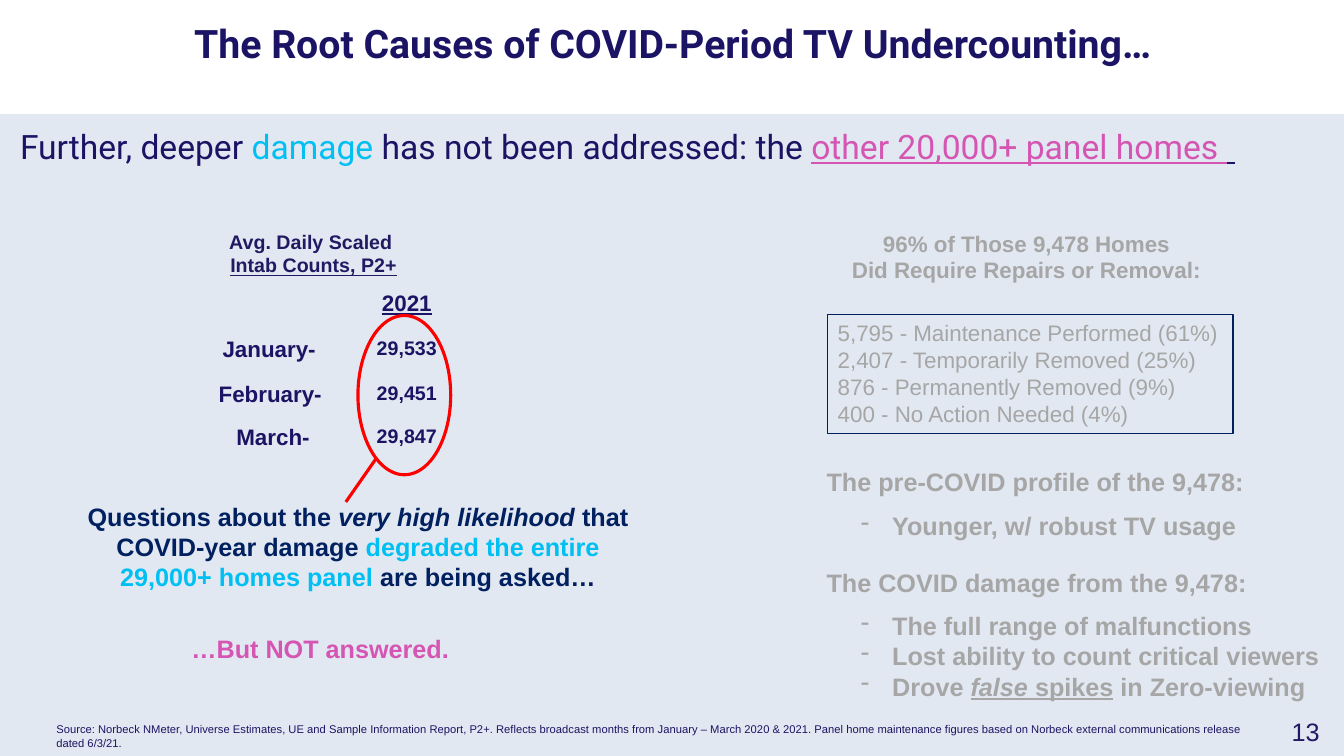
from dataclasses import dataclass

from lxml.etree import SubElement
from pptx import Presentation
from pptx.dml.color import RGBColor
from pptx.enum.shapes import MSO_CONNECTOR, MSO_SHAPE
from pptx.enum.text import MSO_ANCHOR, MSO_AUTO_SIZE, PP_ALIGN
from pptx.oxml.ns import qn
from pptx.util import Emu, Pt

SCALE = 9144  # EMU per px, 100 px to the inch
NAVY, INK, DEEP = "1B1464", "1F1A62", "002060"
GREY, CYAN, PINK, RED, PALE = "A6A6A6", "00BFF2", "D555B3", "FF0000", "E2E8F1"
LEFT, MID, RIGHT = PP_ALIGN.LEFT, PP_ALIGN.CENTER, PP_ALIGN.RIGHT


@dataclass(frozen=True)
class Run:
    text: str
    color: str = ""
    italic: bool = False
    under: bool = False


@dataclass(frozen=True)
class Note:
    """A block of text: place, paragraphs of runs, and shared style."""
    area: tuple[int, int, int, int]
    paras: list[list[Run]]
    size: int
    color: str = NAVY
    bold: bool = True
    align: PP_ALIGN = LEFT
    middle: bool = False
    bullet: bool = False
    font: str = "Arial"


def px(num: int) -> Emu:
    return Emu(num * SCALE)


def rgb(code: str) -> RGBColor:
    return RGBColor.from_string(code)


def lines(*texts: str) -> list[list[Run]]:
    return [[Run(text)] for text in texts]


def write(shape, note: Note) -> None:
    frame = shape.text_frame
    frame.word_wrap = True
    frame.auto_size = MSO_AUTO_SIZE.NONE
    frame.vertical_anchor = MSO_ANCHOR.MIDDLE if note.middle else MSO_ANCHOR.TOP
    for pos, runs in enumerate(note.paras):
        para = frame.add_paragraph() if pos else frame.paragraphs[0]
        para.alignment = note.align
        if note.bullet:
            props = para._p.get_or_add_pPr()
            props.set("marL", str(px(31)))
            props.set("indent", str(px(-31)))
            SubElement(props, qn("a:buChar")).set("char", "-")
        for part in runs:
            run = para.add_run()
            run.text = part.text
            font = run.font
            font.name, font.size, font.bold = note.font, Pt(note.size), note.bold
            font.italic, font.underline = part.italic, part.under
            font.color.rgb = rgb(part.color or note.color)


def draw(slide, note: Note) -> None:
    write(slide.shapes.add_textbox(*map(px, note.area)), note)


def shape(slide, kind: MSO_SHAPE, area: tuple[int, int, int, int],
          line: str, width: float, fill: str = ""):
    item = slide.shapes.add_shape(kind, *map(px, area))
    item.shadow.inherit = False
    if fill:
        item.fill.solid()
        item.fill.fore_color.rgb = rgb(fill)
    else:
        item.fill.background()
    item.line.color.rgb = rgb(line)
    item.line.width = Pt(width)
    return item


TITLE = Note((5, 14, 1324, 57),
             lines("The Root Causes of COVID-Period TV Undercounting…"),
             28, align=MID, font="Roboto")

LEAD = Note((10, 120, 1312, 50), [[
    Run("Further, deeper "), Run("damage", CYAN),
    Run(" has not been addressed: the "),
    Run("other 20,000+ panel homes ", PINK, under=True),
    Run(" ", under=True)]], 24, bold=False, font="Roboto")

REPAIRS = Note((821, 312, 402, 118), lines(
    "5,795 - Maintenance Performed (61%)", "2,407 - Temporarily Removed (25%)",
    "876 - Permanently Removed (9%)", "400 - No Action Needed (4%)"),
    16, GREY, bold=False)

# Month, top, right edge of its label, count, top of the count
MONTHS = [("January-", 328, 323, "29,533", 328),
          ("February-", 372, 329, "29,451", 373),
          ("March-", 415, 317, "29,847", 416)]

HEADS = [(456, "The pre-COVID profile of the 9,478:"),
         (556, "The COVID damage from the 9,478:")]

POINTS = [
    ((844, 502, 401, 38), lines("Younger, w/ robust TV usage")),
    ((844, 603, 489, 95), lines("The full range of malfunctions",
                                "Lost ability to count critical viewers") + [[
        Run("Drove "), Run("false", italic=True, under=True),
        Run(" spikes", under=True), Run(" in Zero-viewing")]]),
]

NOTES = [
    LEAD,
    Note((817, 223, 402, 64), lines("96% of Those 9,478 Homes",
                                    "Did Require Repairs or Removal:"),
         16, GREY, align=MID),
    Note((189, 223, 244, 57),
         [[Run("Avg. Daily Scaled ")], [Run("Intab Counts, P2+", under=True)]],
         14, INK, align=MID),
    Note((345, 282, 117, 37), [[Run("2021", under=True)]], 16, align=MID),
    Note((59, 509, 592, 66), [[
        Run("Questions about the "), Run("very high likelihood ", italic=True),
        Run("that COVID-year damage "),
        Run("degraded the entire 29,000+ homes panel", CYAN),
        Run(" are being asked…")]], 18, DEEP, align=MID, middle=True),
    Note((180, 596, 386, 95), lines("…But NOT answered."), 18, PINK, middle=True),
    Note((1263, 706, 64, 40), lines("13"), 18, INK, bold=False, align=MID),
    Note((46, 712, 1199, 37), lines(
        "Source: Norbeck NMeter, Universe Estimates, UE and Sample Information "
        "Report, P2+. Reflects broadcast months from January – March 2020 & 2021. "
        "Panel home maintenance figures based on Norbeck external communications "
        "release dated 6/3/21."), 8, bold=False),
]


def main() -> None:
    deck = Presentation()
    deck.slide_width, deck.slide_height = px(1333), px(750)
    slide = deck.slides.add_slide(deck.slide_layouts[5])

    # Title and pale band
    title = slide.shapes.title
    title.left, title.top, title.width, title.height = map(px, TITLE.area)
    write(title, TITLE)
    shape(slide, MSO_SHAPE.RECTANGLE, (0, 114, 1338, 636), PALE, 1, PALE)

    # Boxed list of repairs
    write(shape(slide, MSO_SHAPE.RECTANGLE, REPAIRS.area, DEEP, 1), REPAIRS)

    # Single notes
    for note in NOTES:
        draw(slide, note)

    # Profile and damage points
    for top, text in HEADS:
        draw(slide, Note((810, top, 464, 44), lines(text), 18, GREY, middle=True))
    for area, paras in POINTS:
        draw(slide, Note(area, paras, 18, GREY, middle=True, bullet=True))

    # Monthly counts
    for month, top, edge, count, row in MONTHS:
        draw(slide, Note((edge - 127, top, 127, 37), lines(month), 16, align=RIGHT))
        draw(slide, Note((345, row, 117, 34), lines(count), 14, align=MID))

    # Red ring and its tail
    shape(slide, MSO_SHAPE.OVAL, (355, 313, 92, 158), RED, 2.25)
    tail = slide.shapes.add_connector(MSO_CONNECTOR.STRAIGHT,
                                      *map(px, (373, 455, 343, 498)))
    tail.line.color.rgb = rgb(RED)
    tail.line.width = Pt(2.25)
    SubElement(tail._element.spPr, qn("a:effectLst"))

    deck.save("out.pptx")


if __name__ == "__main__":
    main()
